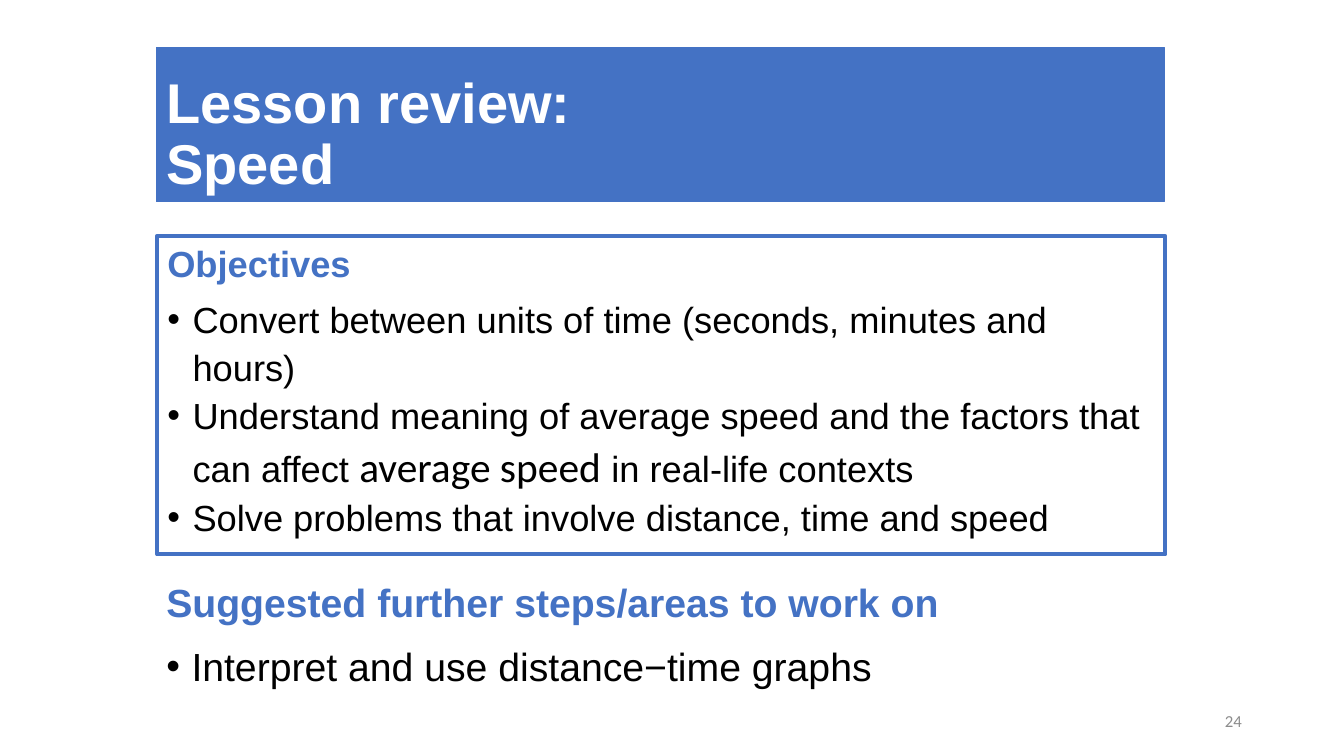
from lxml.etree import SubElement
from pptx import Presentation
from pptx.dml.color import RGBColor
from pptx.enum.text import MSO_ANCHOR, MSO_AUTO_SIZE, PP_ALIGN
from pptx.oxml.ns import qn
from pptx.util import Pt


def paint(color_format, value):
    color_format.rgb = RGBColor.from_string(value)


def add_span(para, text, size, color="000000", bold=False, font="Arial"):
    span = para.add_run()
    span.text = text
    span.font.name = font
    span.font.size = Pt(size)
    span.font.bold = bold
    paint(span.font.color, color)


class ReviewPage:
    blue = "4472C4"
    white = "FFFFFF"
    gray = "8C8C8C"

    def __init__(self, deck):
        self.page = deck.slides.add_slide(deck.slide_layouts[3])

    def place(self, box, left, top, width, height, anchor):
        box.left, box.top = Pt(left), Pt(top)
        box.width, box.height = Pt(width), Pt(height)
        frame = box.text_frame
        frame.word_wrap = True
        frame.auto_size = MSO_AUTO_SIZE.NONE
        frame.vertical_anchor = anchor
        return frame

    def outline(self, box, width):
        paint_target = box.line
        paint_target.fill.solid()
        paint(paint_target.fill.fore_color, self.blue)
        paint_target.width = Pt(width)

    def title(self, lines, left, top, width, height):
        box = self.page.shapes.title
        frame = self.place(box, left, top, width, height, MSO_ANCHOR.BOTTOM)
        box.fill.solid()
        paint(box.fill.fore_color, self.blue)
        self.outline(box, 0.75)
        para = frame.paragraphs[0]
        para.alignment = PP_ALIGN.LEFT
        para.line_spacing = 0.9
        for index, line in enumerate(lines):
            if index:
                para.add_line_break()
            add_span(para, line, 40, self.white, bold=True)

    def section(self, slot, heading, items, size, spacing, left, top, width, height):
        box = self.page.placeholders[slot]
        frame = self.place(box, left, top, width, height, MSO_ANCHOR.TOP)
        para = frame.paragraphs[0]
        self.format_list(para, None, Pt(31), 6)
        add_span(para, heading, size, self.blue, bold=True)
        for item in items:
            para = frame.add_paragraph()
            self.format_list(para, "•", spacing, 0)
            for text, style in item:
                add_span(para, text, **{"size": size, **style})
        return box

    def format_list(self, para, bullet, spacing, after):
        properties = para._p.get_or_add_pPr()
        indent = Pt(18) if bullet else 0
        properties.set("marL", str(indent))
        properties.set("indent", str(-indent))
        if bullet:
            SubElement(properties, qn("a:buFont")).set("typeface", "Arial")
            SubElement(properties, qn("a:buChar")).set("char", bullet)
        else:
            SubElement(properties, qn("a:buNone"))
        para.alignment = PP_ALIGN.LEFT
        para.line_spacing = spacing
        para.space_before = Pt(0)
        para.space_after = Pt(after)

    def number(self, text, left, top, width, height):
        box = self.page.shapes.add_textbox(0, 0, 0, 0)
        frame = self.place(box, left, top, width, height, MSO_ANCHOR.MIDDLE)
        para = frame.paragraphs[0]
        para.alignment = PP_ALIGN.RIGHT
        add_span(para, text, 12, self.gray, font="Calibri")


def main():
    deck = Presentation()
    deck.slide_width, deck.slide_height = Pt(960), Pt(540)
    review = ReviewPage(deck)
    review.title(["Lesson review: ", "Speed"], 111.6, 33.8, 720, 110.2)
    objectives = [
        [("Convert between units of time (seconds, minutes and hours)", {})],
        [
            ("Understand meaning of average speed and the factors that can affect ", {}),
            ("average speed", {"size": 29.6, "font": "Calibri"}),
            (" in real-life contexts", {}),
        ],
        [("Solve problems that involve distance, time and speed", {})],
    ]
    box = review.section(1, "Objectives", objectives, 25.9, 1.1, 112.3, 168.5, 720, 227.5)
    review.outline(box, 3)
    next_steps = [[("Interpret and use distance−time graphs", {})]]
    review.section(2, "Suggested further steps/areas to work on", next_steps,
                   28, 1.2, 111.6, 411.8, 720, 128)
    review.number("24", 678.2, 500.4, 216, 28.8)
    deck.save("out.pptx")


if __name__ == "__main__":
    main()
